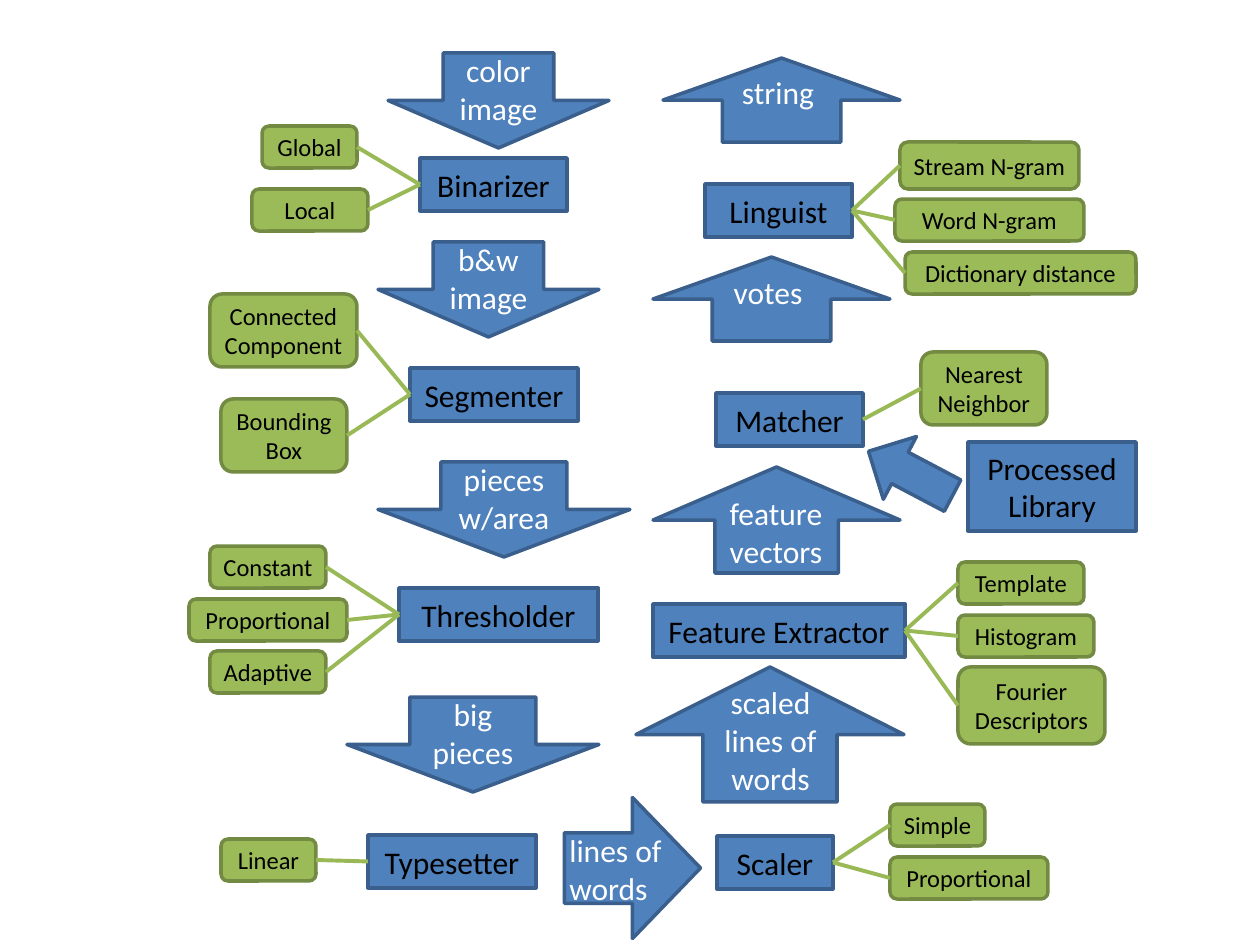
from lxml import etree
from pptx import Presentation
from pptx.dml.color import RGBColor as RGB
from pptx.enum.shapes import MSO_CONNECTOR as CONN, MSO_SHAPE as SHAPE
from pptx.enum.text import MSO_ANCHOR as ANCHOR, PP_ALIGN as ALIGN
from pptx.oxml.ns import qn
from pptx.util import Pt

PX = 914400 / 126  # EMU per pixel
COLORS = {
    "blue": "4F81BD", "blue_edge": "3A5F8C",
    "green": "9BBB59", "green_edge": "738A42", "link": "98B955",
    "black": "000000", "white": "FFFFFF",
}
RGBS = {name: RGB.from_string(value) for name, value in COLORS.items()}

prs = Presentation()
prs.slide_width, prs.slide_height = round(1260 * PX), round(945 * PX)
s = prs.slides.add_slide(prs.slide_layouts[6])


def draw(kind, box, color="blue", rotation=0):
    """Add a filled shape, or a text box when kind is None."""
    x, y, w, h = (round(v * PX) for v in box)
    if kind is None:
        return s.shapes.add_textbox(x, y, w, h)
    sp = s.shapes.add_shape(kind, x, y, w, h)
    sp.shadow.inherit = False
    sp.rotation = rotation
    sp.fill.solid()
    sp.fill.fore_color.rgb = RGBS[color]
    sp.line.color.rgb = RGBS[color + "_edge"]
    sp.line.width = Pt(2)
    return sp


def write(sp, text, color, size=18, align=ALIGN.CENTER, **frame):
    """Put one paragraph into a shape; frame holds text frame settings."""
    tf = sp.text_frame
    for name, value in {"word_wrap": True, **frame}.items():
        setattr(tf, name, value)
    p = tf.paragraphs[0]
    p.alignment = align
    r = p.add_run()
    r.text = text
    for name, value in {"name": "Calibri", "size": Pt(size)}.items():
        setattr(r.font, name, value)
    r.font.color.rgb = RGBS[color]


LABEL = {"vertical_anchor": ANCHOR.MIDDLE, "margin_left": 0, "margin_right": 0,
         "margin_top": 0, "margin_bottom": 0}
LEFT, RIGHT = 1, 3  # connection sites of a rectangle

# Stages, each with the side its options hang on
stages = [
    ("Binarizer", (420, 158, 147, 53), LEFT, [
        ("Global", (262, 126, 95, 42)),
        ("Local", (252, 189, 116, 42))]),
    ("Segmenter", (410, 368, 168, 53), LEFT, [
        ("Connected Component", (210, 294, 147, 73)),
        ("Bounding Box", (221, 399, 126, 73))]),
    ("Thresholder", (399, 588, 199, 53), LEFT, [
        ("Constant", (210, 546, 116, 42)),
        ("Proportional", (189, 599, 158, 42)),
        ("Adaptive", (210, 651, 116, 42))]),
    ("Typesetter", (368, 835, 168, 53), LEFT, [
        ("Linear", (221, 839, 95, 42))]),
    ("Scaler", (717, 836, 116, 53), RIGHT, [
        ("Simple", (890, 804, 95, 42)),
        ("Proportional", (890, 857, 158, 42))]),
    ("Feature Extractor", (653, 604, 252, 53), RIGHT, [
        ("Template", (958, 562, 126, 42)),
        ("Histogram", (958, 615, 136, 42)),
        ("Fourier Descriptors", (958, 667, 147, 77))]),
    ("Matcher", (716, 393, 147, 53), RIGHT, [
        ("Nearest Neighbor", (921, 352, 126, 73))]),
    ("Linguist", (705, 184, 147, 53), RIGHT, [
        ("Stream N-gram", (900, 142, 179, 47)),
        ("Word N-gram", (895, 199, 189, 42)),
        ("Dictionary distance", (905, 252, 231, 42))]),
    ("Processed Library", (968, 442, 168, 89), LEFT, []),
]
for title, box, side, options in stages:
    stage = draw(SHAPE.RECTANGLE, box)
    write(stage, title, "black", **LABEL)
    for name, option_box in options:
        option = draw(SHAPE.ROUNDED_RECTANGLE, option_box, "green")
        write(option, name, "black", 14, **LABEL)
        link = s.shapes.add_connector(CONN.STRAIGHT, 0, 0, 0, 0)
        link.begin_connect(stage, side)
        link.end_connect(option, LEFT + RIGHT - side)
        link.line.color.rgb = RGBS["link"]
        link.line.width = Pt(2.25)
        etree.SubElement(link._element.spPr, qn("a:effectLst"))

# Downward flow on the left
for text, box in [
    ("color image", (388, 53, 221, 95)),
    ("b&w image", (378, 242, 221, 95)),
    ("pieces w/area", (378, 462, 252, 95)),
    ("big pieces", (347, 697, 252, 95)),
]:
    write(draw(SHAPE.DOWN_ARROW, box), text, "white",
          vertical_anchor=ANCHOR.MIDDLE)

# Turned arrows: the flow across and up, with upright captions
for text, box, rotation, caption_box, align in [
    ("lines of words", (562, 800, 141, 136), 270, (557, 825, 125, 89), ALIGN.LEFT),
    ("scaled lines of words", (636, 667, 268, 135), 180, (697, 677, 147, 127), ALIGN.CENTER),
    ("feature vectors", (653, 467, 247, 106), 180, (708, 488, 136, 59), ALIGN.CENTER),
    ("votes", (653, 257, 237, 84), 180, (703, 267, 130, 40), ALIGN.CENTER),
    ("string", (663, 58, 237, 84), 180, (713, 67, 130, 50), ALIGN.CENTER),
]:
    draw(SHAPE.DOWN_ARROW, box, rotation=rotation)
    write(draw(None, caption_box), text, "white", align=align)

# Library feeding the matcher
draw(SHAPE.DOWN_ARROW, (875, 426, 71, 95), rotation=117.8)

prs.save("out.pptx")
